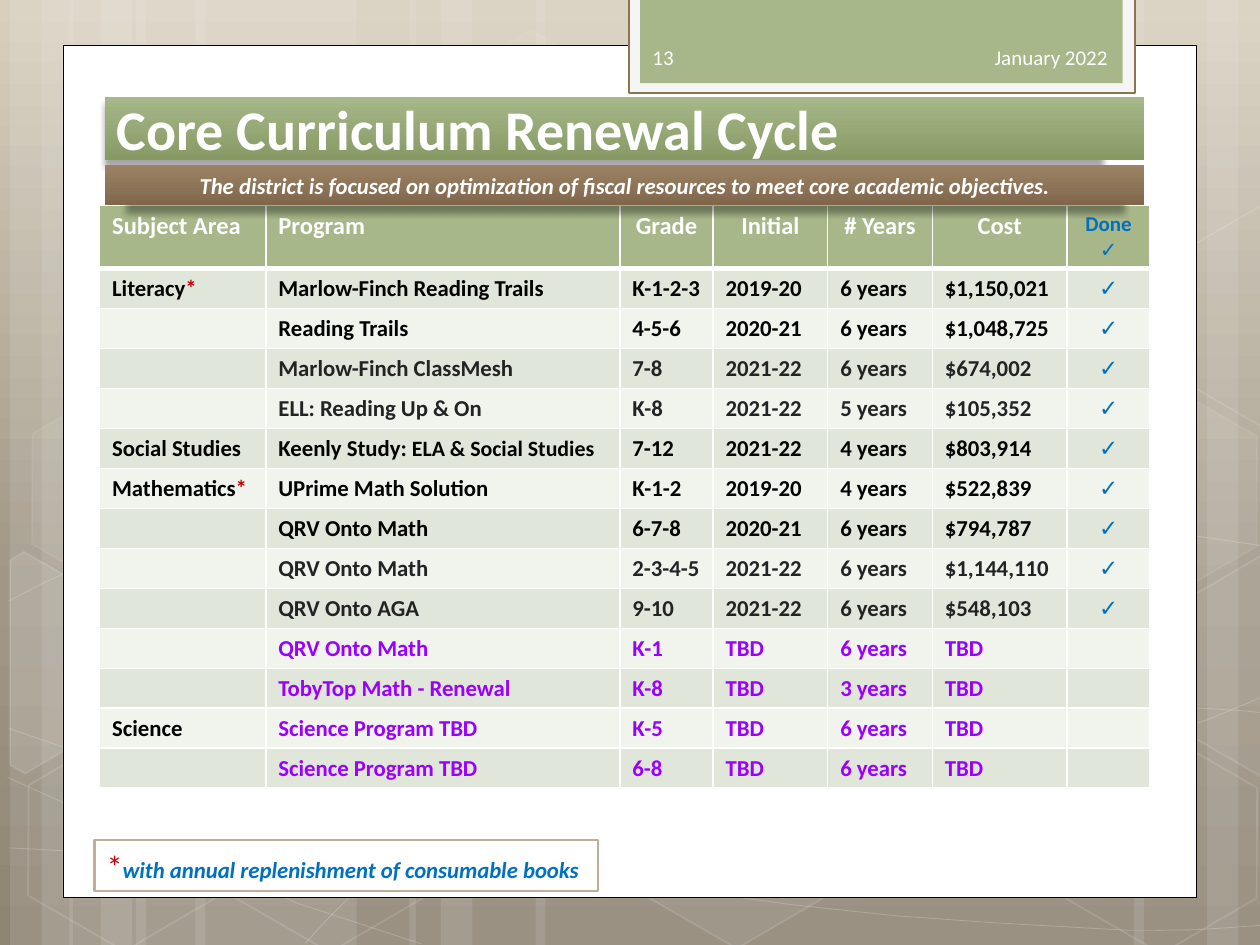
from copy import deepcopy

from lxml import etree
from pptx import Presentation
from pptx.dml.color import RGBColor
from pptx.enum.shapes import MSO_SHAPE
from pptx.enum.text import MSO_ANCHOR, PP_ALIGN
from pptx.oxml.ns import qn
from pptx.util import Inches, Pt

RECTANGLE, HEXAGON = MSO_SHAPE.RECTANGLE, MSO_SHAPE.HEXAGON
LEFT, CENTER, RIGHT = PP_ALIGN.LEFT, PP_ALIGN.CENTER, PP_ALIGN.RIGHT
TOP, MIDDLE = MSO_ANCHOR.TOP, MSO_ANCHOR.MIDDLE
WHITE, BLACK, GRAY, PURPLE = "FFFFFF", "000000", "232325", "9900FF"
BLUE, RED, GREEN = "0070C0", "C00000", "A7B789"

STRIPES = [(1.08, 1.75), (0.08, 0.5), (0.33, 0.83), (1.55, 1.75), (0.55, 0.5), (0.8, 0.83),
           (7.33, 1.75), (9.58, 0.5), (9, 0.83), (4.25, 3.08), (3.25, 0.5), (3.5, 0.83)]
CURVES = [
    [(0.07, 6.73), (0.61, 6.76), (1.15, 6.79), (1.9, 6.78), (2.65, 6.77), (3.58, 6.75), (4.58, 6.65),
     (5.58, 6.55), (7, 6.36), (7.92, 6.17), (8.83, 5.98), (9.77, 5.68), (10.07, 5.51)],
    [(0.07, 4.77), (0.36, 4.61), (0.65, 4.46), (1.21, 4.31), (1.78, 4.16), (2.59, 3.94), (3.47, 3.87),
     (4.36, 3.8), (5.44, 3.79), (6.54, 3.87), (7.64, 3.95), (9.47, 4.26), (10.07, 4.34)],
    [(0.06, 6.17), (1.27, 6.72), (2.47, 7.27), (3.34, 7.49)],
    [(0.07, 5.78), (0.38, 5.89), (0.7, 6), (1.28, 6.16), (1.86, 6.31), (2.73, 6.56), (3.57, 6.73),
     (4.4, 6.9), (5.45, 7.08), (6.28, 7.18), (7.11, 7.29), (8, 7.33), (8.53, 7.36),
     (9.05, 7.4), (9.19, 7.38), (9.45, 7.38), (9.71, 7.37), (9.89, 7.35), (10.07, 7.34)],
    [(2.42, 7.49), (2.6, 7.29), (2.78, 7.09), (3.02, 6.91), (3.26, 6.73), (3.6, 6.53), (3.88, 6.39),
     (4.16, 6.25), (4.33, 6.19), (4.7, 6.09), (5.06, 5.99), (5.73, 5.85), (6.08, 5.78),
     (6.44, 5.71), (6.49, 5.71), (6.8, 5.69), (7.11, 5.66), (7.6, 5.63), (7.94, 5.62),
     (8.29, 5.61), (8.86, 5.62), (9.53, 5.62), (9.71, 5.63), (9.88, 5.64), (10.06, 5.66)],
]
HEXAGONS = [(3.34, 0.36, 4, 8), (4.97, 5.89, 6, 12), (0.11, 5.91, 0, 12), (0.14, 3.12, 7, 8),
            (1.74, 5.92, 0, 12), (7.53, 4.53, 10, 12), (8.34, 5.93, 0, 12), (8.34, 3.14, 7, 8)]
CUT_HEXAGONS = [
    ([(0.08, 4.45), (0.19, 4.38), (0.96, 4.82), (0.95, 5.7), (0.2, 6.14), (0.08, 6.07)], 10),
    ([(9.26, 4.85), (10.01, 4.41), (10.09, 4.46), (10.09, 6.13), (10.02, 6.17), (9.26, 5.73)], 4),
    ([(9.26, 2.07), (10.01, 1.63), (10.1, 1.68), (10.09, 3.35), (10.02, 3.39), (9.26, 2.95)], 0),
]
COLUMN_WIDTHS = [1.32, 2.81, 0.74, 0.91, 0.83, 1.07, 0.66]
HEADERS = ["Subject Area", "Program", "Grade", "Initial", "# Years", "Cost"]
LEARNING_PROGRAM = [("Keenly Study: ", {}), ("ELA & Social Studies", {"size": 12.5})]
PROGRAMS = [
    ("Literacy*", "Marlow-Finch Reading Trails", "K-1-2-3", "2019-20", "6 years", "$1,150,021", BLACK),
    ("", "Reading Trails", "4-5-6", "2020-21", "6 years", "$1,048,725", BLACK),
    ("", "Marlow-Finch ClassMesh", "7-8", "2021-22", "6 years", "$674,002", GRAY),
    ("", "ELL: Reading Up & On", "K-8", "2021-22", "5 years", "$105,352", GRAY),
    ("Social Studies", LEARNING_PROGRAM, "7-12", "2021-22", "4 years", "$803,914", BLACK),
    ("Mathematics*", "UPrime Math Solution", "K-1-2", "2019-20", "4 years", "$522,839", BLACK),
    ("", "QRV Onto Math", "6-7-8", "2020-21", "6 years", "$794,787", BLACK),
    ("", "QRV Onto Math", "2-3-4-5", "2021-22", "6 years", "$1,144,110", GRAY),
    ("", "QRV Onto AGA", "9-10", "2021-22", "6 years", "$548,103", GRAY),
    ("", "QRV Onto Math", "K-1", "TBD", "6 years", "TBD", PURPLE),
    ("", "TobyTop Math - Renewal", "K-8", "TBD", "3 years", "TBD", PURPLE),
    ("Science", "Science Program TBD", "K-5", "TBD", "6 years", "TBD", PURPLE),
    ("", "Science Program TBD", "6-8", "TBD", "6 years", "TBD", PURPLE),
]


def rgb(value):
    """Turn a hex string into a colour."""
    return RGBColor.from_string(value)


def set_alpha(parent, percent):
    """Make the solid colour directly inside an element partly transparent."""
    if percent < 100:
        color = parent.find(f"{qn('a:solidFill')}/{qn('a:srgbClr')}")
        etree.SubElement(color, qn("a:alpha"), val=str(percent * 1000))


def set_gradient(fill, start, end):
    """Apply a two-colour gradient running from top to bottom."""
    fill.gradient()
    fill.gradient_angle = 270
    for stop, color, position in zip(fill.gradient_stops, (start, end), (0, 1)):
        stop.color.rgb = rgb(color)
        stop.position = position


def write(frame, text, size=13, color=WHITE, bold=False, italic=False, align=LEFT):
    """Write a string or a list of formatted runs as one paragraph."""
    paragraph = frame.paragraphs[0]
    paragraph.alignment = align
    for part, changes in [(text, {})] if isinstance(text, str) else text:
        style = {"size": size, "color": color, "bold": bold, "italic": italic, **changes}
        run = paragraph.add_run()
        run.text = part
        run.font.name = "Calibri"
        run.font.size = Pt(style["size"])
        run.font.color.rgb = rgb(style["color"])
        run.font.bold, run.font.italic = style["bold"], style["italic"]


def sample_curve(points, steps=3):
    """Return points along a chain of cubic curves."""
    result = [points[0]]
    for first in range(0, len(points) - 1, 3):
        corners = points[first:first + 4]
        for step in range(1, steps + 1):
            t = step / steps
            weights = ((1 - t) ** 3, 3 * t * (1 - t) ** 2, 3 * t * t * (1 - t), t ** 3)
            result.append(tuple(sum(w * corner[axis] for w, corner in zip(weights, corners))
                                for axis in (0, 1)))
    return result


class SlideBuilder:
    """Hold the slide and add styled elements to it."""

    def __init__(self, slide, font_color=WHITE):
        self.slide = slide
        self.font_color = font_color

    def background(self, start, middle, end):
        """Fill the background with a three-colour gradient."""
        set_gradient(self.slide.background.fill, start, end)
        stops = next(self.slide._element.iter(qn("a:gsLst")))
        stops.insert(1, deepcopy(stops[0]))
        center = self.slide.background.fill.gradient_stops[1]
        center.color.rgb = rgb(middle)
        center.position = 0.62

    def finish(self, shape, fill=None, line=None, width=1, fill_alpha=100, line_alpha=100):
        """Set the fill and line of a shape."""
        shape.shadow.inherit = False
        if fill and fill_alpha:
            shape.fill.solid()
            shape.fill.fore_color.rgb = rgb(fill)
            set_alpha(shape._element.spPr, fill_alpha)
        else:
            shape.fill.background()
        if line:
            shape.line.color.rgb = rgb(line)
            shape.line.width = Pt(width)
            set_alpha(shape._element.spPr.find(qn("a:ln")), line_alpha)
        else:
            shape.line.fill.background()
        return shape

    def shape(self, left, top, width, height, kind=RECTANGLE, line_width=1, **style):
        """Add a preset shape."""
        box = [Inches(value) for value in (left, top, width, height)]
        return self.finish(self.slide.shapes.add_shape(kind, *box), width=line_width, **style)

    def outline(self, points, close=False, **style):
        """Add a freeform through the points."""
        start, *others = [(Inches(x), Inches(y)) for x, y in points]
        builder = self.slide.shapes.build_freeform(*start)
        builder.add_line_segments(others, close=close)
        return self.finish(builder.convert_to_shape(), **style)

    def label(self, shape, text, anchor=MIDDLE, **style):
        """Write text in a shape."""
        shape.text_frame.word_wrap = True
        shape.text_frame.vertical_anchor = anchor
        write(shape.text_frame, text, **{"color": self.font_color, **style})

    def text(self, left, top, width, height, text, **style):
        """Add a text box."""
        box = [Inches(value) for value in (left, top, width, height)]
        self.label(self.slide.shapes.add_textbox(*box), text, **style)

    def banner(self, top, height, colors, text, shadow_align, **style):
        """Add a gradient banner with a soft, slightly narrower shadow."""
        shape = self.shape(0.83, top, 8.25, height)
        set_gradient(shape.fill, *colors)
        effects = shape._element.spPr.find(qn("a:effectLst"))
        shadow = etree.SubElement(effects, qn("a:outerShdw"), blurRad=str(Pt(3.5)), dist=str(Pt(4)),
                                  dir="5400000", sx="96000", algn=shadow_align, rotWithShape="0")
        color = etree.SubElement(shadow, qn("a:srgbClr"), val=BLACK)
        etree.SubElement(color, qn("a:alpha"), val="34000")
        self.label(shape, text, **style)

    def cell(self, cell, text, fill, bottom=1, **style):
        """Fill, border and write one table cell."""
        cell.fill.solid()
        cell.fill.fore_color.rgb = rgb(fill)
        properties = cell._tc.get_or_add_tcPr()
        for index, side in enumerate("LRTB"):
            width = bottom if side == "B" else 1
            line = etree.Element(qn(f"a:ln{side}"), w=str(Pt(width)))
            solid = etree.SubElement(line, qn("a:solidFill"))
            etree.SubElement(solid, qn("a:srgbClr"), val=WHITE)
            properties.insert(index, line)
        if text:
            write(cell.text_frame, text, bold=True, **style)
        else:
            etree.SubElement(cell.text_frame.paragraphs[0]._p, qn("a:endParaRPr"), sz="1300")

    def program_table(self):
        """Add the table of programs."""
        table = self.slide.shapes.add_table(len(PROGRAMS) + 1, len(COLUMN_WIDTHS), Inches(0.79),
                                            Inches(1.63), Inches(8.33), Inches(4.62)).table
        for column, width in zip(table.columns, COLUMN_WIDTHS):
            column.width = Inches(width)
        for index, row in enumerate(table.rows):
            row.height = Inches(0.2 if index else 0.29)
        for column, header in enumerate(HEADERS):
            self.cell(table.cell(0, column), header, GREEN, bottom=3, size=14,
                      align=CENTER if column > 1 else LEFT)
        self.cell(table.cell(0, 6), "Done✓", GREEN, bottom=3, size=12, color=BLUE, align=CENTER)
        for row, (subject, *values, color) in enumerate(PROGRAMS, 1):
            fill = "E1E6DA" if row % 2 else "F1F3ED"
            name, star, _ = subject.partition("*")
            runs = [(name, {})] + ([(star, {"color": RED})] if star else [])
            self.cell(table.cell(row, 0), runs if subject else "", fill, color=BLACK)
            for column, value in enumerate(values, 1):
                self.cell(table.cell(row, column), value, fill, color=color)
            self.cell(table.cell(row, 6), "" if color == PURPLE else "✓", fill,
                      color=BLUE, align=CENTER)


def main():
    """Build and save the slide."""
    presentation = Presentation()
    presentation.slide_width, presentation.slide_height = Inches(10), Inches(7.5)
    builder = SlideBuilder(presentation.slides.add_slide(presentation.slide_layouts[6]))
    builder.background("D8CFBE", "A09787", "8F8575")
    for left, width in STRIPES:
        builder.shape(left, 0, width, 7.5, fill=WHITE, fill_alpha=10)
    for points in CURVES:
        builder.outline(sample_curve(points), line=WHITE, width=0.5, line_alpha=20)
    for left, top, fill_alpha, line_alpha in HEXAGONS:
        hexagon = builder.shape(left, top, 1.75, 1.52, kind=HEXAGON, fill=WHITE, line=WHITE,
                                fill_alpha=fill_alpha, line_alpha=line_alpha)
        hexagon.rotation = 30
        hexagon.adjustments[0] = 0.285
    for points, fill_alpha in CUT_HEXAGONS:
        builder.outline(points, close=True, fill=WHITE, line=WHITE, fill_alpha=fill_alpha, line_alpha=12)
    builder.shape(0.5, 0.36, 9, 6.76, fill=WHITE, line=BLACK, line_width=0.5)
    builder.shape(4.99, -0.02, 4.02, 0.76, fill="F5F5F5", line="897550", line_width=1.25)
    builder.shape(5.08, -0.02, 3.83, 0.68, fill=GREEN)
    builder.text(6.56, 0.25, 2.33, 0.4, "January 2022", size=12, color="FEFEFE", align=RIGHT)
    builder.text(5.08, 0.25, 1.46, 0.4, "13", size=12, color="FEFEFE")
    builder.banner(0.77, 0.5, (GREEN, "879A64"), "Core Curriculum Renewal Cycle", "bl", size=32, bold=True)
    builder.program_table()
    note = builder.shape(0.75, 6.67, 4, 0.4, fill=WHITE, line="BEAE98", line_width=1.25)
    builder.label(note, [("*", {"size": 18, "color": RED, "bold": False, "italic": False}),
                         ("with annual replenishment of consumable books", {})],
                  color=BLUE, bold=True, italic=True)
    builder.banner(1.31, 0.32, ("9C8265", "80674C"),
                   "The district is focused on optimization of fiscal resources to meet core academic objectives.",
                   "ctr", anchor=TOP, bold=True, italic=True, align=CENTER)
    presentation.save("out.pptx")


if __name__ == "__main__":
    main()
